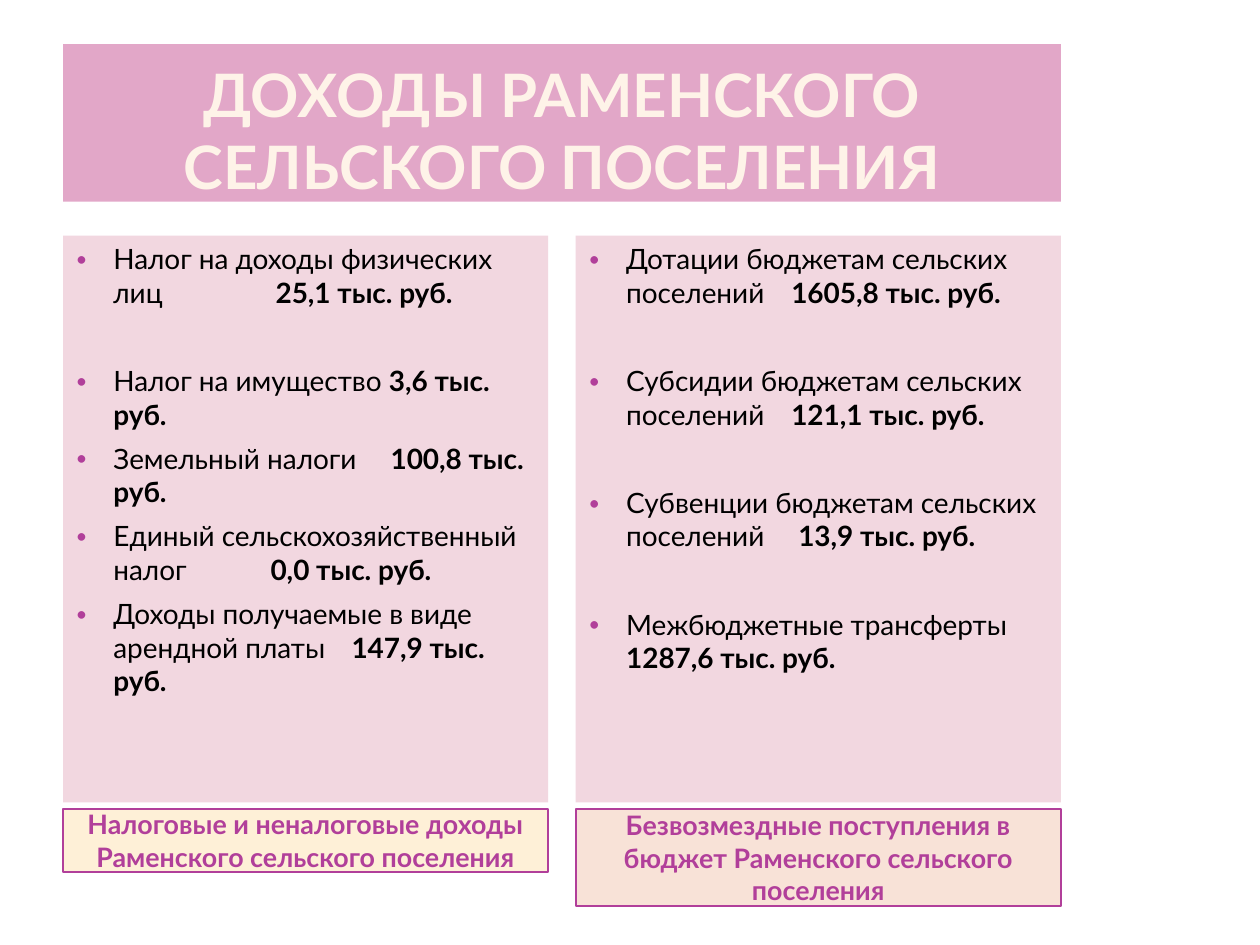
from collections import namedtuple

from lxml import etree
from pptx import Presentation
from pptx.dml.color import RGBColor as RGB
from pptx.enum.text import MSO_ANCHOR as ANCHOR, MSO_AUTO_SIZE as AUTO, PP_ALIGN as ALIGN
from pptx.oxml.ns import qn
from pptx.util import Pt

Theme = namedtuple("Theme", "font accent text panel title_fill title_text "
                            "title_size caption_size list_size")
theme = Theme("Lato", "B13F9A", "000000", "F2D7E0", "E2A7C8", "FEF3E8", 34.2, 15.3, 16)

INDENT = 21.6
GAP = 6
BLOCK_GAP = 31.2  # one empty line plus the gaps around it

# Each item: label, amount, tab stop after the label (None = plain space), space before
own_income = [
    ("Налог на доходы физических лиц", "25,1 тыс. руб.", 114.3, 0),
    ("Налог на имущество", "3,6 тыс. руб.", None, BLOCK_GAP),
    ("Земельный налоги", "100,8 тыс. руб.", 155.4, GAP),
    ("Единый сельскохозяйственный налог", "0,0 тыс. руб.", 111.4, GAP),
    ("Доходы получаемые в виде арендной платы", "147,9 тыс. руб.", 157.7, GAP),
]
transfers = [
    ("Дотации бюджетам сельских поселений", "1605,8 тыс. руб.", 116, 0),
    ("Субсидии бюджетам сельских поселений", "121,1 тыс. руб.", 116, BLOCK_GAP),
    ("Субвенции бюджетам сельских поселений", "13,9 тыс. руб.", 120, BLOCK_GAP),
    ("Межбюджетные трансферты", "1287,6 тыс. руб.", None, BLOCK_GAP),
]
# Each column: left, items, caption, caption fill, caption height
columns = [
    (36, own_income, "Налоговые и неналоговые доходы Раменского сельского поселения",
     "FEF0D7", 36),
    (329, transfers, "Безвозмездные поступления в бюджет Раменского сельского поселения",
     "F8E2D7", 55.4),
]


def place(sp, left, top, width, height, fill, anchor):
    """Position and fill a placeholder; return its text frame."""
    sp.left, sp.top, sp.width, sp.height = Pt(left), Pt(top), Pt(width), Pt(height)
    sp.fill.solid()
    sp.fill.fore_color.rgb = RGB.from_string(fill)
    tf = sp.text_frame
    tf.word_wrap = True
    tf.auto_size = AUTO.NONE
    tf.vertical_anchor = anchor
    return tf


def add_run(p, text, size, color, bold):
    r = p.add_run()
    r.text = text
    r.font.name, r.font.size, r.font.bold = theme.font, Pt(size), bold
    r.font.color.rgb = RGB.from_string(color)


prs = Presentation()
prs.slide_width, prs.slide_height = Pt(720), Pt(540)
s = prs.slides.add_slide(prs.slide_layouts[4])  # Comparison
holders = {sp.placeholder_format.idx: sp for sp in s.placeholders}

# Title
tf = place(holders[0], 36, 25.2, 570.2, 90, theme.title_fill, ANCHOR.BOTTOM)
tf.margin_left = tf.margin_right = Pt(3.6)
tf.margin_top = tf.margin_bottom = 0
p = tf.paragraphs[0]
p.alignment = ALIGN.CENTER
add_run(p, "ДОХОДЫ РАМЕНСКОГО СЕЛЬСКОГО ПОСЕЛЕНИЯ", theme.title_size, theme.title_text, True)

for i, (left, items, caption, caption_fill, caption_height) in enumerate(columns):
    # Caption under the list
    sp = holders[2 * i + 1]
    tf = place(sp, left, 462.2, 277.2, caption_height, caption_fill, ANCHOR.MIDDLE)
    sp.line.color.rgb = RGB.from_string(theme.accent)
    sp.line.width = Pt(1)
    p = tf.paragraphs[0]
    p.alignment = ALIGN.CENTER
    p.space_before = Pt(0)
    add_run(p, caption, theme.caption_size, theme.accent, True)

    # Income list
    tf = place(holders[2 * i + 2], left, 134.6, 277.2, 324, theme.panel, ANCHOR.TOP)
    for n, (label, amount, stop, before) in enumerate(items):
        p = tf.add_paragraph() if n else tf.paragraphs[0]
        pPr = p._p.get_or_add_pPr()
        pPr.set("marL", str(Pt(INDENT)))
        pPr.set("indent", str(-Pt(INDENT)))
        clr = etree.SubElement(pPr, qn("a:buClr"))
        etree.SubElement(clr, qn("a:srgbClr"), val=theme.accent)
        etree.SubElement(pPr, qn("a:buSzPct"), val="73000")
        etree.SubElement(pPr, qn("a:buFont"), typeface=theme.font)
        etree.SubElement(pPr, qn("a:buChar"), char="•")
        if stop:
            tabs = etree.SubElement(pPr, qn("a:tabLst"))
            etree.SubElement(tabs, qn("a:tab"), pos=str(Pt(stop)), algn="l")
        p.space_before = Pt(before)
        add_run(p, label + ("\t" if stop else " "), theme.list_size, theme.text, False)
        add_run(p, amount, theme.list_size, theme.text, True)

prs.save("out.pptx")
